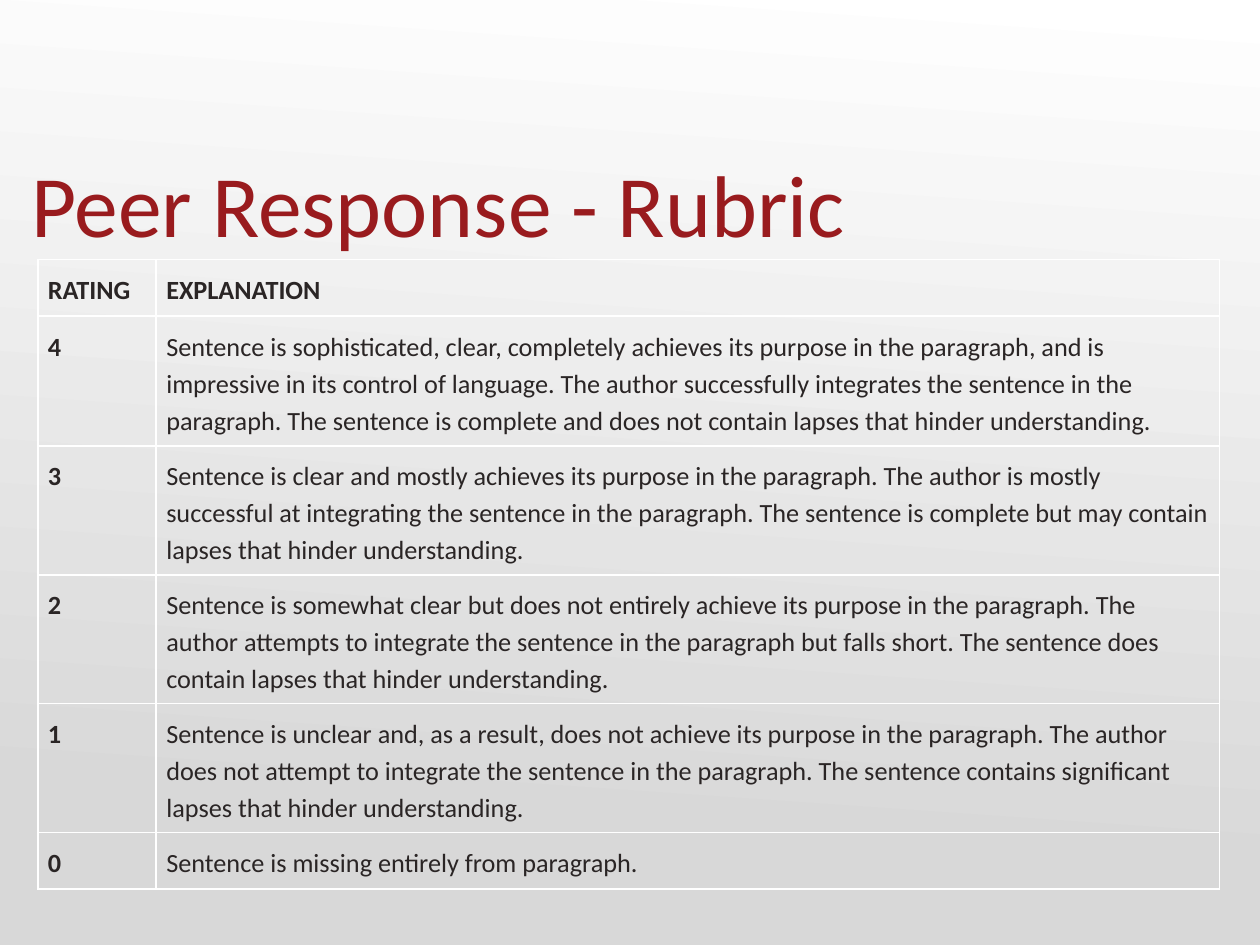
from lxml import etree
from pptx import Presentation
from pptx import util as u
from pptx.dml.color import RGBColor
from pptx.enum import text
from pptx.oxml import ns

WIDTH, HEIGHT = 10, 7.5
FONT = "Calibri"
RED, INK, WHITE, GREY = "991B1E", "2A2525", "FFFFFF", "D8D8D8"
COLUMNS = [0.94, 8.44]
SHORT_ROW, FIRST_ROW, LONG_ROW = 0.45, 1.03, 1.01
ROW_HEIGHTS = [SHORT_ROW, FIRST_ROW] + [LONG_ROW] * 3 + [SHORT_ROW]
RUBRIC = [
    ("RATING", "EXPLANATION"),
    ("4", "Sentence is sophisticated, clear, completely achieves its purpose in the "
          "paragraph, and is impressive in its control of language. The author "
          "successfully integrates the sentence in the paragraph. The sentence is "
          "complete and does not contain lapses that hinder understanding."),
    ("3", "Sentence is clear and mostly achieves its purpose in the paragraph. The "
          "author is mostly successful at integrating the sentence in the paragraph. "
          "The sentence is complete but may contain lapses that hinder understanding."),
    ("2", "Sentence is somewhat clear but does not entirely achieve its purpose in the "
          "paragraph. The author attempts to integrate the sentence in the paragraph "
          "but falls short. The sentence does contain lapses that hinder understanding."),
    ("1", "Sentence is unclear and, as a result, does not achieve its purpose in the "
          "paragraph. The author does not attempt to integrate the sentence in the "
          "paragraph. The sentence contains significant lapses that hinder "
          "understanding."),
    ("0", "Sentence is missing entirely from paragraph."),
]


def set_color(color, value):
    color.rgb = RGBColor.from_string(value)


def format_runs(p, size, color, bold=False):
    for r in p.runs:
        r.font.name = FONT
        r.font.size = u.Pt(size)
        r.font.bold = bold
        set_color(r.font.color, color)


def set_background(s):
    fill = s.background.fill
    fill.gradient()
    fill.gradient_angle = 360 - 94
    for stop, (position, color) in zip(fill.gradient_stops, [(0, WHITE), (0.85, GREY)]):
        stop.position = position
        set_color(stop.color, color)


def add_title(s, title):
    sp = s.shapes.add_textbox(u.Inches(0.25), u.Inches(0.77),
                              u.Inches(9.25), u.Inches(1.25))
    tf = sp.text_frame
    tf.word_wrap = True
    tf.vertical_anchor = text.MSO_ANCHOR.BOTTOM
    tf.margin_left = tf.margin_right = tf.margin_bottom = 0
    tf.margin_top = u.Inches(0.05)
    tf.text = title
    format_runs(tf.paragraphs[0], 50, RED)


def set_borders(cell, color, width):
    tc_pr = cell._tc.get_or_add_tcPr()
    for side in ("L", "R", "T", "B"):
        ln = etree.SubElement(tc_pr, ns.qn(f"a:ln{side}"), w=str(u.Pt(width)))
        fill = etree.SubElement(ln, ns.qn("a:solidFill"))
        etree.SubElement(fill, ns.qn("a:srgbClr"), val=color)


def fill_cell(cell, words, bold):
    set_borders(cell, WHITE, 1)
    cell.fill.background()
    cell.margin_left = cell.margin_right = u.Inches(0.08)
    cell.margin_top = cell.margin_bottom = u.Inches(0.08)
    cell.text_frame.text = words
    p = cell.text_frame.paragraphs[0]
    p.line_spacing = 1.15
    format_runs(p, 15, INK, bold)


def add_rubric(s):
    frame = s.shapes.add_table(len(RUBRIC), len(COLUMNS), u.Inches(0.3), u.Inches(2.06),
                               u.Inches(sum(COLUMNS)), u.Inches(sum(ROW_HEIGHTS)))
    table = frame.table
    table.first_row = table.horz_banding = False
    for column, width in zip(table.columns, COLUMNS):
        column.width = u.Inches(width)
    for i, (row, height) in enumerate(zip(table.rows, ROW_HEIGHTS)):
        row.height = u.Inches(height)
        for j, words in enumerate(RUBRIC[i]):
            fill_cell(table.cell(i, j), words, bold=i == 0 or j == 0)


def main():
    prs = Presentation()
    prs.slide_width, prs.slide_height = u.Inches(WIDTH), u.Inches(HEIGHT)
    s = prs.slides.add_slide(prs.slide_layouts[6])
    set_background(s)
    add_title(s, "Peer Response - Rubric")
    add_rubric(s)
    prs.save("out.pptx")


if __name__ == "__main__":
    main()
